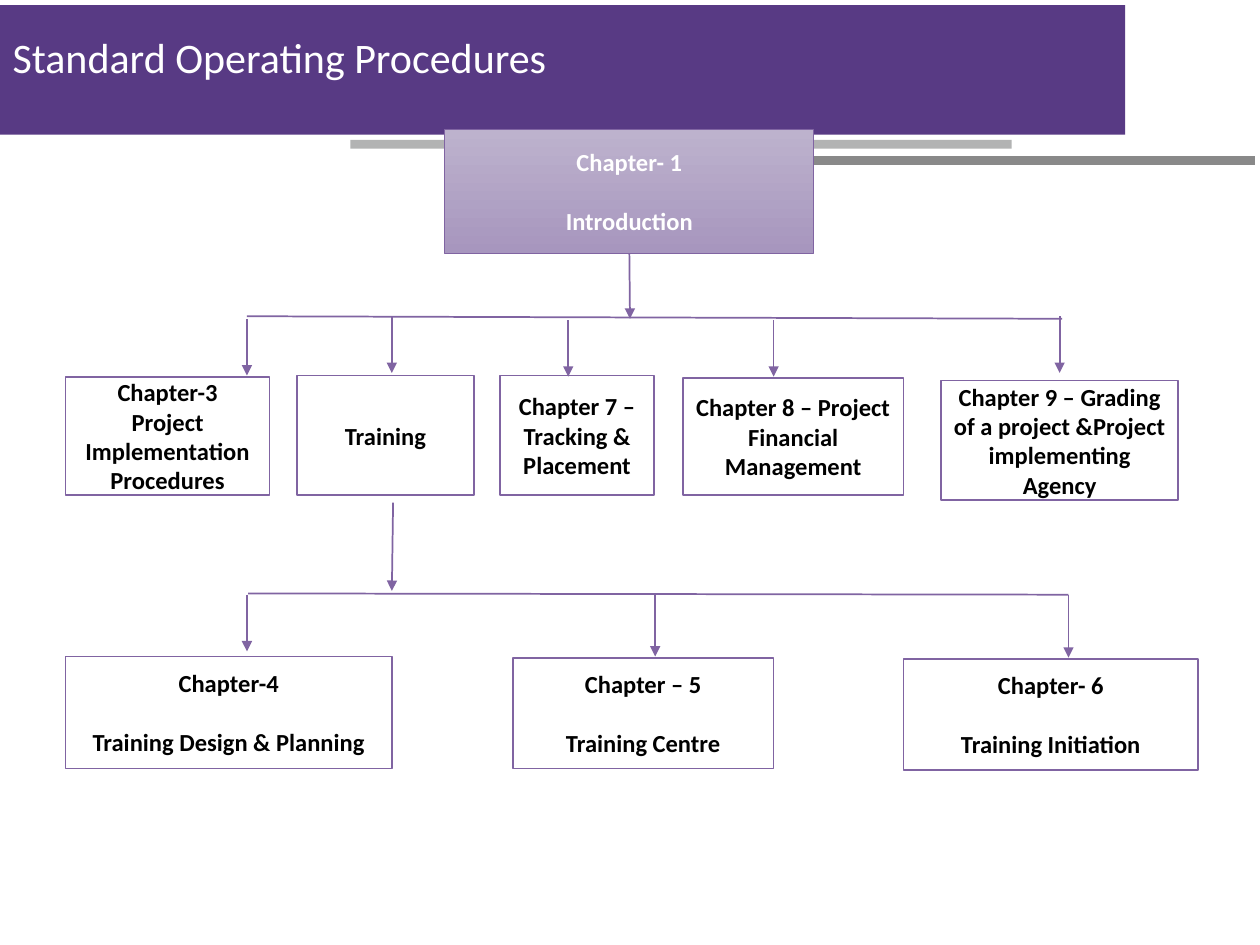
"""Build a one-slide chart of the chapters of a procedures manual."""
from pptx import Presentation
from pptx import util as u
from pptx.dml.color import RGBColor
from pptx.enum import shapes, text
from pptx.oxml.ns import qn
from lxml import etree

BRAND = RGBColor(0x58, 0x3A, 0x84)
EDGE = RGBColor(0x80, 0x64, 0xA2)
PALE = RGBColor(0xBD, 0xB2, 0xCD)
DEEP = RGBColor(0xA7, 0x96, 0xBE)
LIGHT = RGBColor(0xB2, 0xB3, 0xB3)
GRAY = RGBColor(0x89, 0x89, 0x89)
WHITE = RGBColor(0xFF, 0xFF, 0xFF)
BLACK = RGBColor(0, 0, 0)


class Chart:
    """Holds the style and the current slide."""

    font = "Calibri"
    size = 14
    gap = 17

    def __init__(self, slide):
        self.slide = slide

    def run(self, para, words, size, color, bold=False):
        """Add one styled run to a paragraph."""
        run = para.add_run()
        run.text = words
        run.font.name = self.font
        run.font.size = u.Pt(size)
        run.font.bold = bold
        run.font.color.rgb = color

    def title(self, words, *area):
        """Place the title in front of the banner."""
        title = self.slide.shapes.title
        title.left, title.top, title.width, title.height = map(u.Inches, area)
        frame = title.text_frame
        frame.word_wrap = True
        frame.auto_size = text.MSO_AUTO_SIZE.NONE
        frame.vertical_anchor = text.MSO_ANCHOR.TOP
        para = frame.paragraphs[0]
        para.alignment = text.PP_ALIGN.LEFT
        self.run(para, words, 24, WHITE)
        title.element.getparent().append(title.element)

    def bar(self, color, *area):
        """Add a plain filled rectangle."""
        bar = self.slide.shapes.add_shape(
            shapes.MSO_SHAPE.RECTANGLE, *map(u.Inches, area))
        bar.shadow.inherit = False
        bar.fill.solid()
        bar.fill.fore_color.rgb = color
        bar.line.fill.background()
        return bar

    def box(self, lines, *area, color=BLACK, width=1, gap=0):
        """Add an outlined box with centred bold lines."""
        box = self.bar(WHITE, *area)
        box.line.color.rgb = EDGE
        box.line.width = u.Pt(width)
        frame = box.text_frame
        frame.word_wrap = True
        frame.vertical_anchor = text.MSO_ANCHOR.MIDDLE
        for i, words in enumerate(lines):
            para = frame.add_paragraph() if i else frame.paragraphs[0]
            para.alignment = text.PP_ALIGN.CENTER
            if i and gap:
                para.space_before = u.Pt(gap)
            self.run(para, words, self.size, color, True)
        return box

    def root(self, lines, *area):
        """Add the shaded top box."""
        box = self.box(lines, *area, color=WHITE, width=0.5, gap=self.gap)
        box.fill.gradient()
        box.fill.gradient_angle = 270
        for stop, color in zip(box.fill.gradient_stops, (PALE, DEEP)):
            stop.color.rgb = color
        return box

    def line(self, *ends, arrow=True):
        """Add a straight line, with an arrowhead if asked."""
        line = self.slide.shapes.add_connector(
            shapes.MSO_CONNECTOR.STRAIGHT, *map(u.Inches, ends))
        line.line.color.rgb = EDGE
        line.line.width = u.Pt(1)
        props = line.element.spPr
        if arrow:
            etree.SubElement(props.find(qn("a:ln")), qn("a:tailEnd"),
                             type="triangle")
        etree.SubElement(props, qn("a:effectLst"))
        return line


def main():
    """Draw the slide and save it."""
    deck = Presentation()
    deck.slide_width, deck.slide_height = u.Inches(10), u.Inches(7.5)
    chart = Chart(deck.slides.add_slide(deck.slide_layouts[5]))

    chart.bar(BRAND, 0, 0.04, 8.93, 1.03)
    chart.bar(GRAY, 4.71, 1.24, 5.25, 0.07)
    chart.bar(LIGHT, 2.78, 1.11, 5.25, 0.07)
    chart.title("Standard Operating Procedures", 0, 0.2, 9.06, 0.5)

    root = chart.root(("Chapter- 1", "Introduction"), 3.53, 1.03, 2.93, 0.98)
    chart.line(4.99, 2.01, 5, 2.53).begin_connect(root, 2)
    chart.line(1.96, 2.51, 8.43, 2.53, arrow=False)

    upper = (
        (("Chapter-3", "Project Implementation Procedures"),
         0.52, 2.99, 1.62, 0.94, 1.96, 2.53),
        (("Training",), 2.36, 2.98, 1.4, 0.95, 3.11, 2.51),
        (("Chapter 7 – Tracking & Placement",),
         3.97, 2.98, 1.22, 0.95, 4.51, 2.54),
        (("Chapter 8 – Project Financial Management",),
         5.42, 3, 1.75, 0.93, 6.14, 2.54),
        (("Chapter 9 – Grading of a project &Project implementing Agency",),
         7.47, 3.02, 1.88, 0.95, 8.41, 2.51),
    )
    for lines, *area, x, y in upper:
        chart.box(lines, *area)
        chart.line(x, y, x, y + 0.45)

    chart.line(3.12, 3.99, 3.11, 4.69)
    chart.line(1.97, 4.71, 8.48, 4.72, arrow=False)

    lower = (
        (("Chapter-4", "Training Design & Planning"),
         0.52, 5.21, 2.59, 0.89, 1.96, 5.17),
        (("Chapter – 5", "Training Centre"),
         4.07, 5.22, 2.07, 0.88, 5.2, 5.21),
        (("Chapter- 6", "Training Initiation"),
         7.17, 5.23, 2.34, 0.88, 8.48, 5.22),
    )
    for lines, *area, x, y in lower:
        chart.box(lines, *area, gap=chart.gap)
        chart.line(x, 4.72, x, y)

    deck.save("out.pptx")


if __name__ == "__main__":
    main()
